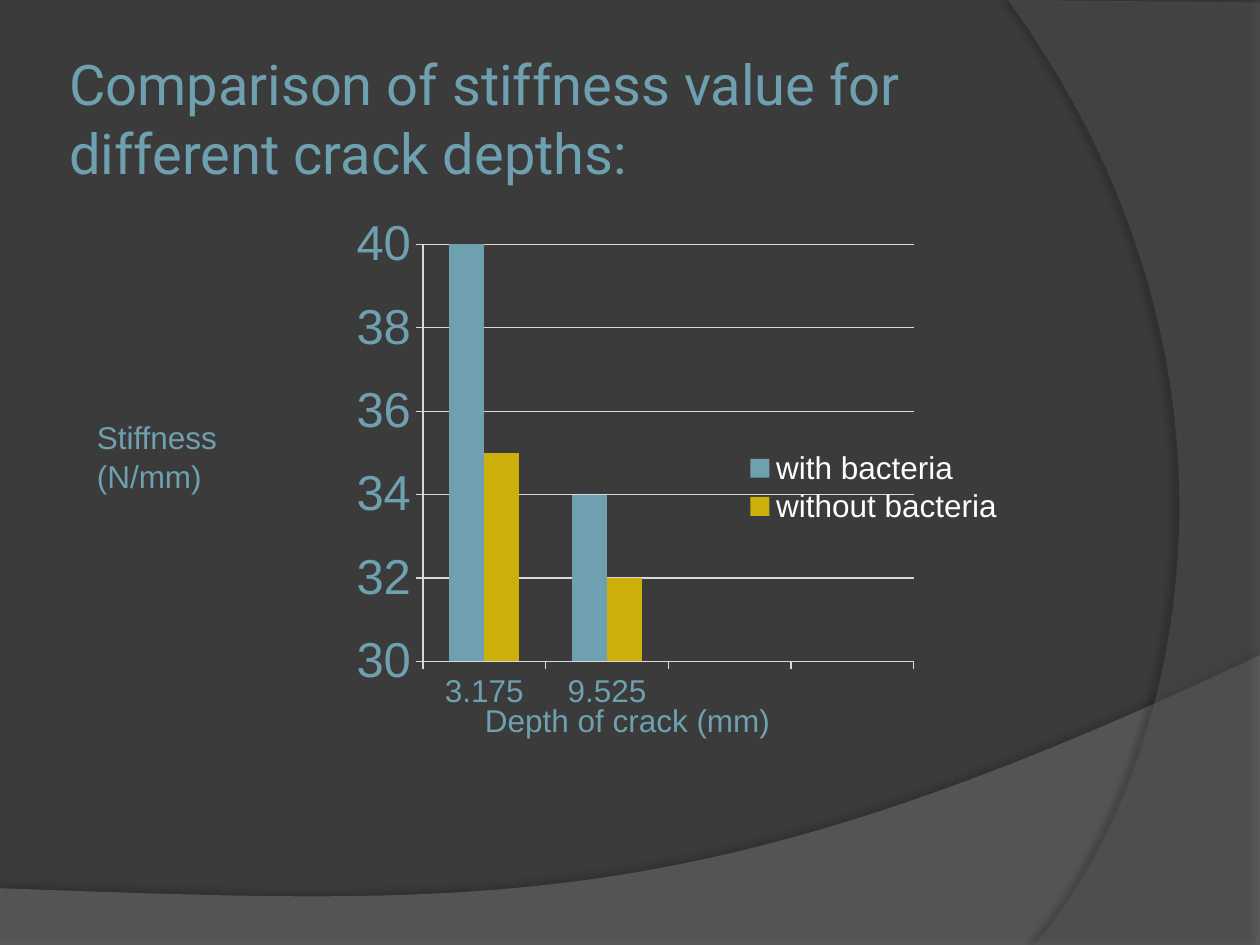
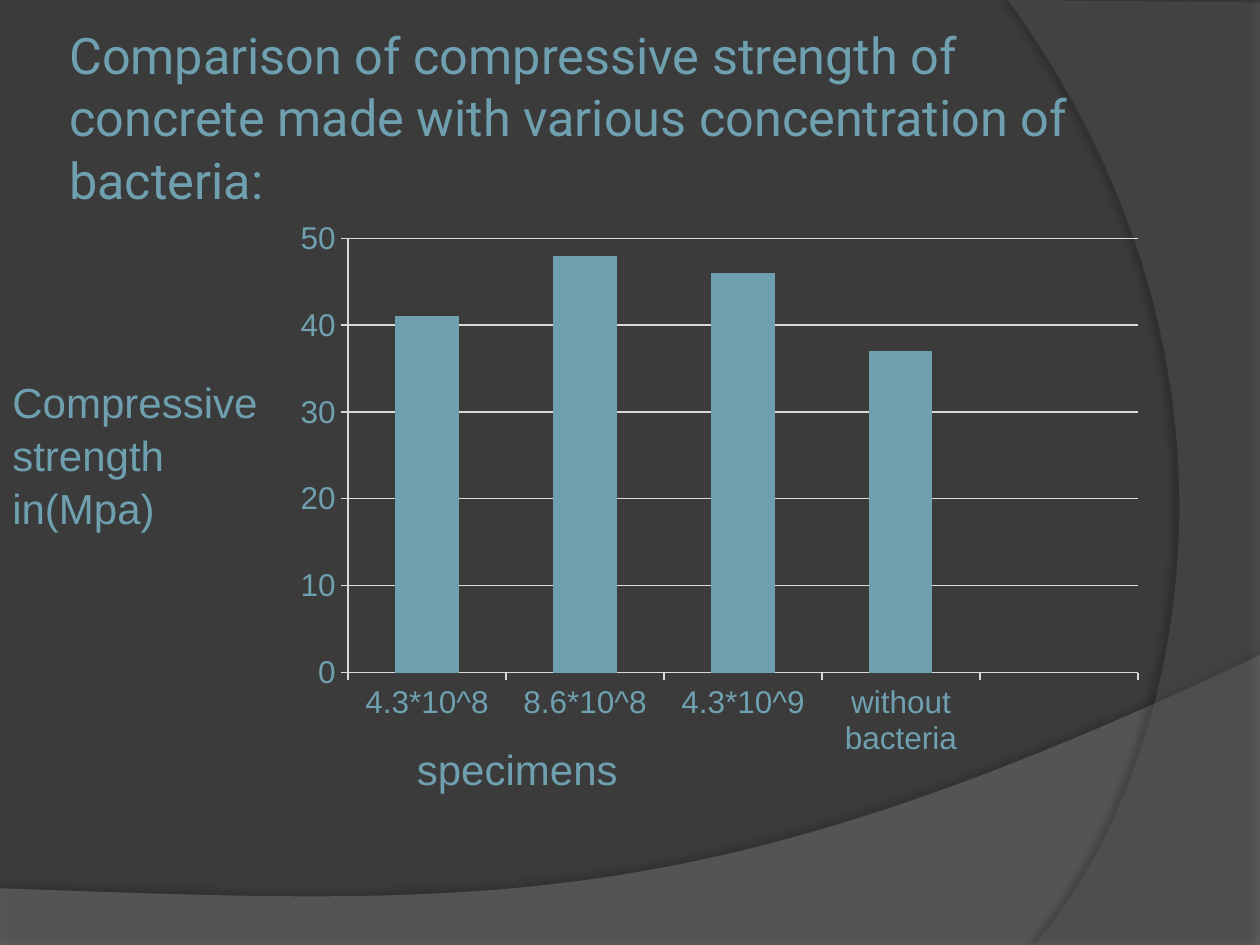
"""Build two slides comparing stiffness and strength of bacterial concrete."""
import lxml.etree
import pptx
import pptx.chart.data
import pptx.dml.color
import pptx.enum.chart
import pptx.enum.text
import pptx.oxml.ns
import pptx.util
from dataclasses import dataclass

Inches = pptx.util.Inches
RGB = pptx.dml.color.RGBColor.from_string
qn = pptx.oxml.ns.qn


@dataclass(frozen=True)
class Theme:
    backdrop: str = "3B3B3B"
    wave: str = "7F7F7F"
    arc: str = "5E5E5E"
    shadow: str = "000000"
    accent: str = "6EA0B0"
    gold: str = "CCAF0A"
    light: str = "FFFFFF"
    rule: str = "D9D9D9"
    title_font: str = "Roboto"
    body_font: str = "Arial"
    title_size: float = 32
    long_title_size: float = 28.8
    tick_large: float = 28
    label_large: float = 24
    body_size: float = 18


theme = Theme()


def style_font(font, size, color=theme.accent, name=theme.body_font):
    values = {"size": pptx.util.Pt(size), "name": name, "bold": False}
    for key, value in values.items():
        setattr(font, key, value)
    font.color.rgb = RGB(color)


def add_text(page, place, lines, size, name=theme.body_font, spacing=1.05, frame_format=None):
    box = page.shapes.add_textbox(*map(Inches, place))
    frame = box.text_frame
    for key, value in {"word_wrap": True, **(frame_format or {})}.items():
        setattr(frame, key, value)
    for index, line in enumerate(lines):
        para = frame.add_paragraph() if index else frame.paragraphs[0]
        para.line_spacing = spacing
        span = para.add_run()
        span.text = line
        style_font(span.font, size, name=name)


deck = pptx.Presentation()
deck.slide_width, deck.slide_height = Inches(10), Inches(7.5)
master = deck.slide_master
master.background.fill.solid()
master.background.fill.fore_color.rgb = RGB(theme.backdrop)

title_frame = {
    "vertical_anchor": pptx.enum.text.MSO_ANCHOR.MIDDLE,
    **{f"margin_{side}": Inches(0.05) for side in ("left", "top", "right", "bottom")},
}

slides = [
    {
        "title": "Comparison of stiffness value for different crack depths:",
        "title_place": (0.5, 0.3, 8.17, 1.25),
        "title_size": theme.title_size,
        "chart_place": (0.25, 1.67, 8.83, 4.83),
        "categories": ["3.175", "9.525", "", ""],
        "series": [
            ("with bacteria", [44, 34, None, None], theme.accent),
            ("without bacteria", [35, 32, None, None], theme.gold),
        ],
        "scale": {"minimum_scale": 30, "maximum_scale": 40, "major_unit": 2},
        "tick_size": theme.tick_large,
        "layouts": {"plotArea": (0.352, 0.056, 0.441, 0.685),
                    "legend": (0.637, 0.39, 0.24, 0.13)},
        "labels": [
            ((0.67, 3.25, 1.25, 0.71), ["Stiffness", "(N/mm)"]),
            ((3.75, 5.5, 3.75, 0.4), ["Depth of crack (mm)"]),
        ],
        "label_size": theme.body_size,
    },
    {
        "title": "Comparison of compressive strength of concrete made with "
                 "various concentration of bacteria:",
        "title_place": (0.5, 0.17, 8.17, 1.5),
        "title_size": theme.long_title_size,
        "chart_place": (2.25, 1.67, 6.92, 4.42),
        "categories": ["4.3*10^8", "8.6*10^8", "4.3*10^9", "without bacteria", ""],
        "series": [("Series 1", [41, 48, 46, 37, None], theme.accent)],
        "scale": {"minimum_scale": 0, "maximum_scale": 50, "major_unit": 10},
        "tick_size": theme.body_size,
        "layouts": {"plotArea": (0.074, 0.05, 0.906, 0.78)},
        "labels": [
            ((0, 2.92, 2.17, 1.31), ["Compressive strength in(Mpa)"]),
            ((3.21, 5.83, 3.58, 0.5), ["specimens"]),
        ],
        "label_size": theme.label_large,
    },
]
pages = [deck.slides.add_slide(deck.slide_layouts[6]) for _ in slides]

bands = [
    ([(0, 7.05), (0, 7.5), (10, 7.5)],
     [(10, 5.2), (5.59, 7.29), (3.91, 7.19), (0, 7.05)],
     theme.wave, 45, (35, 4, 3.5, 270)),
    ([(10, 0.02), (10, 7.5)],
     [(8.21, 7.5), (9.35, 6.19), (10.18, 3), (8, 0)],
     theme.arc, 40, (45, 4, 4, 180)),
]
curve_steps = 60
for corners, controls, color, opacity, (strength, blur, distance, angle) in bands:
    points = list(corners)
    for step in range(curve_steps + 1):
        t = step / curve_steps
        weights = ((1 - t) ** 3, 3 * t * (1 - t) ** 2, 3 * t * t * (1 - t), t ** 3)
        points.append([sum(w * c[axis] for w, c in zip(weights, controls)) for axis in (0, 1)])
    outline = [(Inches(x), Inches(y)) for x, y in points]
    builder = pages[0].shapes.build_freeform(*outline[0])
    builder.add_line_segments(outline[1:], close=True)
    band = builder.convert_to_shape()
    band.fill.solid()
    band.fill.fore_color.rgb = RGB(color)
    band.line.fill.background()
    band.shadow.inherit = False
    tint = band.element.spPr.find(qn("a:solidFill"))[0]
    lxml.etree.SubElement(tint, qn("a:alpha"), val=str(opacity * 1000))
    effects = band.element.spPr.find(qn("a:effectLst"))
    shadow = lxml.etree.SubElement(
        effects, qn("a:outerShdw"), blurRad=str(pptx.util.Pt(blur)),
        dist=str(pptx.util.Pt(distance)), dir=str(angle * 60000), rotWithShape="0")
    shade = lxml.etree.SubElement(shadow, qn("a:srgbClr"), val=theme.shadow)
    lxml.etree.SubElement(shade, qn("a:alpha"), val=str(strength * 1000))
    master.element.cSld.spTree.append(band.element)

for page, content in zip(pages, slides):
    add_text(page, content["title_place"], [content["title"]], content["title_size"],
             theme.title_font, 1.03, title_frame)

    data = pptx.chart.data.CategoryChartData()
    data.categories = content["categories"]
    for name, values, _ in content["series"]:
        data.add_series(name, values)
    chart = page.shapes.add_chart(
        pptx.enum.chart.XL_CHART_TYPE.COLUMN_CLUSTERED,
        *map(Inches, content["chart_place"]), data).chart
    chart.has_title = False
    style_font(chart.font, theme.body_size, theme.light)
    plot = chart.plots[0]
    for key, value in {"gap_width": 150, "overlap": 0, "vary_by_categories": False}.items():
        setattr(plot, key, value)
    for series, (_, _, color) in zip(plot.series, content["series"]):
        series.format.fill.solid()
        series.format.fill.fore_color.rgb = RGB(color)

    for key, value in content["scale"].items():
        setattr(chart.value_axis, key, value)
    chart.value_axis.has_major_gridlines = True
    axes = [(chart.category_axis, theme.body_size), (chart.value_axis, content["tick_size"])]
    for axis, size in axes:
        axis.major_tick_mark = pptx.enum.chart.XL_TICK_MARK.OUTSIDE
        style_font(axis.tick_labels.font, size)
    for ruled in (chart.category_axis, chart.value_axis, chart.value_axis.major_gridlines):
        ruled.format.line.color.rgb = RGB(theme.rule)
        ruled.format.line.width = pptx.util.Pt(0.75)

    chart.has_legend = "legend" in content["layouts"]
    if chart.has_legend:
        chart.legend.position = pptx.enum.chart.XL_LEGEND_POSITION.RIGHT
        chart.legend.include_in_layout = False
        style_font(chart.legend.font, theme.body_size, theme.light)
    for part, fractions in content["layouts"].items():
        holder = chart.element.find(f".//{qn('c:' + part)}")
        for former in holder.findall(qn("c:layout")):
            holder.remove(former)
        layout = lxml.etree.Element(qn("c:layout"))
        holder.insert(1 if part == "legend" else 0, layout)
        manual = lxml.etree.SubElement(layout, qn("c:manualLayout"))
        settings = {"xMode": "edge", "yMode": "edge", **dict(zip("xywh", fractions))}
        if part == "plotArea":
            settings = {"layoutTarget": "inner", **settings}
        for key, value in settings.items():
            lxml.etree.SubElement(manual, qn(f"c:{key}"), val=str(value))

    for place, lines in content["labels"]:
        add_text(page, place, lines, content["label_size"])

deck.save("out.pptx")
